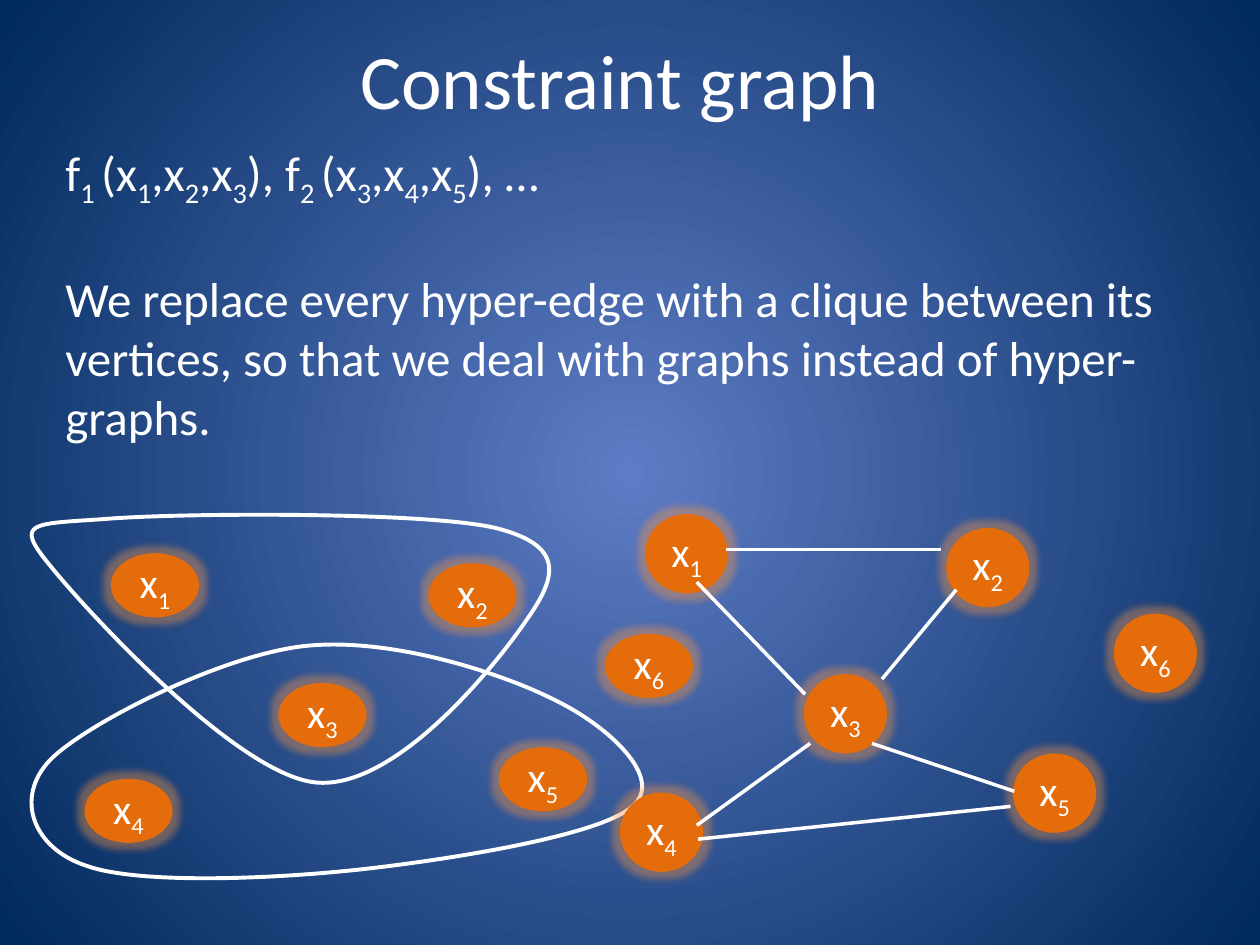
from lxml import etree
from pptx import Presentation
from pptx.dml.color import RGBColor
from pptx.enum.shapes import MSO_CONNECTOR, MSO_SHAPE
from pptx.enum.text import MSO_ANCHOR, PP_ALIGN
from pptx.oxml.ns import qn
from pptx.util import Pt

PX = 9144
BLANK = 6
OVAL, STRAIGHT = MSO_SHAPE.OVAL, MSO_CONNECTOR.STRAIGHT
MIDDLE, TOP = MSO_ANCHOR.MIDDLE, MSO_ANCHOR.TOP
CENTER, LEFT = PP_ALIGN.CENTER, PP_ALIGN.LEFT

WHITE = RGBColor(0xFF, 0xFF, 0xFF)
ORANGE = RGBColor(0xE4, 0x6C, 0x0A)
GLOW = RGBColor(0xF7, 0x96, 0x46)
BLUE_CENTER = RGBColor(0x5E, 0x7C, 0xC5)
BLUE_EDGE = RGBColor(0x00, 0x29, 0x5C)

TITLE_BOX = (42, 0, 900, 125)
STATEMENT_BOX = (42, 108, 958, 244)
HYPERGRAPH_BOX = (25, 408, 525, 289)
CLIQUE_BOX = (492, 408, 458, 284)

FUNCTIONS = "f|1 |(x|1|,x|2|,x|3|), f|2 |(x|3|,x|4|,x|5|), …"
EXPLANATION = ("We replace every hyper-edge with a clique between its vertices, "
               "so that we deal with graphs instead of hyper-graphs.")

HYPEREDGES = {
    (0, 0, 411, 213): [
        (58, 4),
        (117, -1), (312, -2), (368, 11), (424, 25), (417, 50), (393, 84),
        (370, 118), (289, 220), (225, 213), (162, 206), (42, 75), (14, 40),
        (-14, 6), (0, 8), (58, 4)],
    (0, 103, 485, 186): [
        (262, 179),
        (334, 171), (452, 152), (477, 129), (503, 107), (458, 65), (414, 44),
        (370, 22), (282, -6), (215, 2), (149, 10), (44, 63), (15, 92),
        (-14, 122), (1, 162), (43, 176), (84, 191), (189, 187), (262, 179)],
}
HYPERGRAPH_NODES = {1: (63, 31), 3: (196, 134), 4: (42, 210),
                    5: (371, 185), 2: (315, 39), 6: (455, 95)}
CLIQUE_NODES = {1: (20, 0), 3: (146, 127), 4: (0, 221),
                5: (312, 190), 2: (259, 11), 6: (392, 79)}
CLIQUE_EDGES = [
    ((61, 54), (147, 143)), ((84, 28), (255, 28)), ((267, 60), (208, 131)),
    ((151, 182), (61, 247)), ((200, 182), (313, 220)), ((62, 258), (310, 232)),
]


def emu(*lengths):
    return [length * PX for length in lengths]


def apply(target, formats):
    for name, value in formats.items():
        setattr(target, name, value)


def write(paragraph, marked_text, size, align):
    paragraph.alignment = align
    for index, part in enumerate(marked_text.split("|")):
        run = paragraph.add_run()
        run.text = part
        apply(run.font, {"size": Pt(size), "name": "Calibri"})
        run.font.color.rgb = WHITE
        if index % 2:
            run._r.get_or_add_rPr().set("baseline", "-25000")


def paint_background(slide):
    fill = slide.background.fill
    fill.gradient()
    for stop, position, color in zip(fill.gradient_stops, (0, 1), (BLUE_CENTER, BLUE_EDGE)):
        stop.position = position
        stop.color.rgb = color
    gradient = slide.background._cSld.find(".//" + qn("a:gradFill"))
    for linear in gradient.findall(qn("a:lin")):
        gradient.remove(linear)
    circle = etree.SubElement(gradient, qn("a:path"), path="circle")
    etree.SubElement(circle, qn("a:fillToRect"), l="50000", t="50000", r="50000", b="50000")


def add_text(slide, box, lines, size, align, anchor):
    frame = slide.shapes.add_textbox(*emu(*box)).text_frame
    apply(frame, {"word_wrap": True, "vertical_anchor": anchor})
    for index, line in enumerate(lines):
        paragraph = frame.add_paragraph() if index else frame.paragraphs[0]
        write(paragraph, line, size, align)
        if index:
            paragraph.space_before = Pt(34)


def add_node(shapes, label, left, top, width, height):
    node = shapes.add_shape(OVAL, *emu(left, top, width, height))
    node.fill.solid()
    node.fill.fore_color.rgb = ORANGE
    node.line.fill.background()
    node.shadow.inherit = False
    effects = node._element.spPr.find(qn("a:effectLst"))
    glow = etree.SubElement(effects, qn("a:glow"), rad="101600")
    color = etree.SubElement(glow, qn("a:srgbClr"), val=str(GLOW))
    etree.SubElement(color, qn("a:alpha"), val="40000")
    frame = node.text_frame
    apply(frame, {"word_wrap": False, "vertical_anchor": MIDDLE, "margin_left": 0,
                  "margin_right": 0, "margin_top": 0, "margin_bottom": 0})
    write(frame.paragraphs[0], f"x|{label}", 24, CENTER)


def add_path_step(outline_path, kind, points):
    step = etree.SubElement(outline_path, qn(kind))
    for point in points:
        x, y = emu(*point)
        etree.SubElement(step, qn("a:pt"), x=str(x), y=str(y))


def add_hyperedge(shapes, left, top, width, height, points):
    right, bottom = left + width, top + height
    builder = shapes.build_freeform(*emu(left, top))
    builder.add_line_segments([emu(right, top), emu(right, bottom), emu(left, bottom)])
    outline = builder.convert_to_shape()
    outline_path = outline._element.spPr.find(".//" + qn("a:path"))
    for step in list(outline_path):
        outline_path.remove(step)
    add_path_step(outline_path, "a:moveTo", points[:1])
    for start in range(1, len(points), 3):
        add_path_step(outline_path, "a:cubicBezTo", points[start:start + 3])
    add_path_step(outline_path, "a:close", [])
    outline.fill.background()
    outline.shadow.inherit = False
    outline.line.color.rgb = WHITE
    outline.line.width = Pt(2.25)


def add_edge(shapes, start, end):
    edge = shapes.add_connector(STRAIGHT, *emu(*start, *end))
    edge.line.color.rgb = WHITE
    edge.line.width = Pt(2)
    etree.SubElement(edge._element.spPr, qn("a:effectLst"))


def add_hypergraph(slide, box):
    left, top = box[:2]
    shapes = slide.shapes.add_group_shape().shapes
    for (x, y, width, height), points in HYPEREDGES.items():
        add_hyperedge(shapes, left + x, top + y, width, height, points)
    for label, (x, y) in HYPERGRAPH_NODES.items():
        add_node(shapes, label, left + x, top + y, 70, 51)


def add_clique_graph(slide, box):
    left, top = box[:2]
    shapes = slide.shapes.add_group_shape().shapes
    for label, (x, y) in CLIQUE_NODES.items():
        add_node(shapes, label, left + x, top + y, 66, 63)
    for ends in CLIQUE_EDGES:
        add_edge(shapes, *[(left + x, top + y) for x, y in ends])


def main():
    deck = Presentation()
    apply(deck, {"slide_width": 1000 * PX, "slide_height": 750 * PX})
    slide = deck.slides.add_slide(deck.slide_layouts[BLANK])
    paint_background(slide)
    add_text(slide, TITLE_BOX, ["Constraint graph"], 44, CENTER, MIDDLE)
    add_text(slide, STATEMENT_BOX, [FUNCTIONS, EXPLANATION], 28, LEFT, TOP)
    add_hypergraph(slide, HYPERGRAPH_BOX)
    add_clique_graph(slide, CLIQUE_BOX)
    deck.save("out.pptx")


if __name__ == "__main__":
    main()
